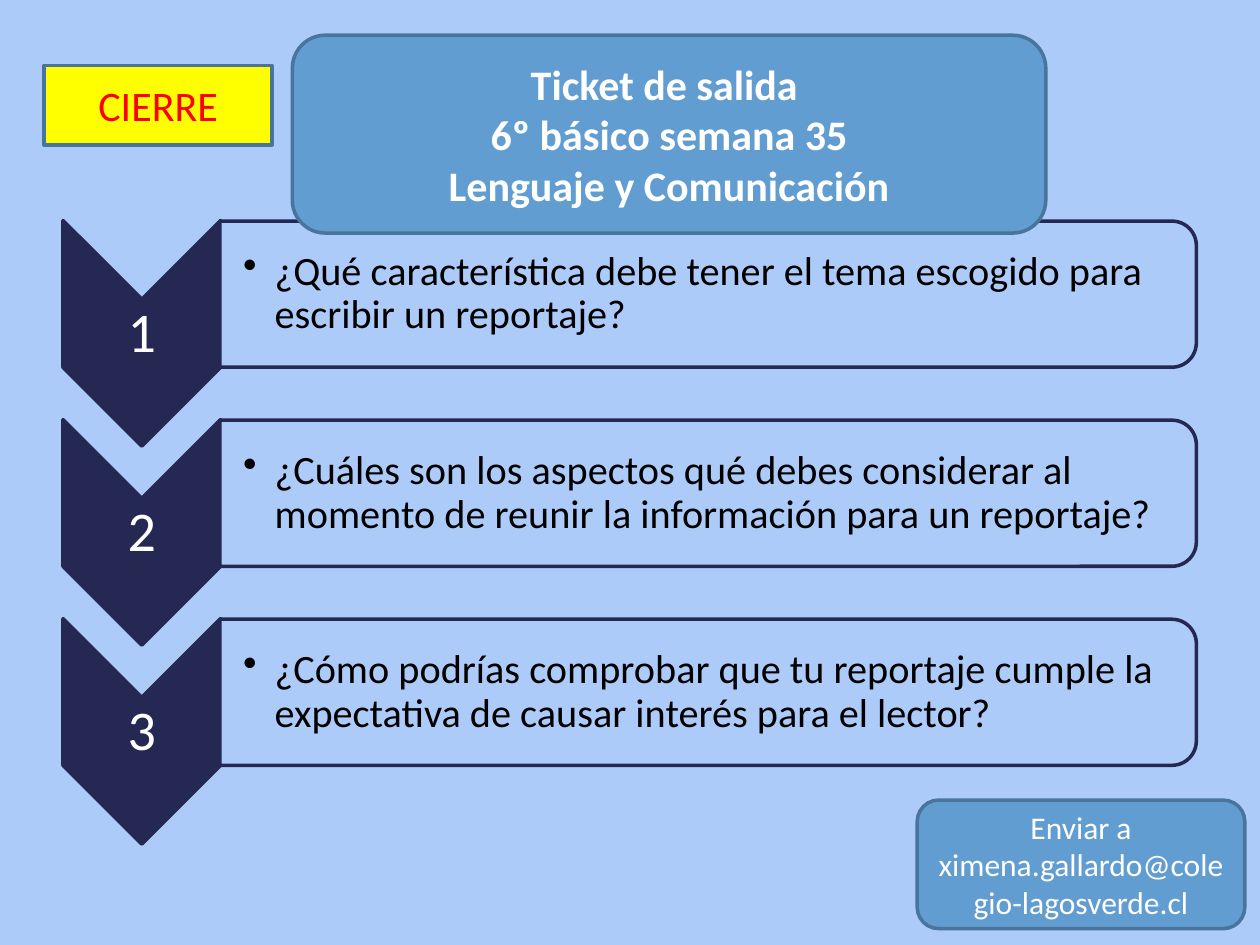
from lxml import etree
from pptx import Presentation
from pptx import util as u
from pptx.dml import color
from pptx.enum import shapes, text
from pptx.oxml import ns

COLORS = {
    "sky": "ACCBF9", "navy": "242852", "blue": "629DD1", "edge": "49749B",
    "yellow": "FFFF00", "red": "FF0000", "white": "FFFFFF", "black": "000000",
}
QUESTIONS = [
    "¿Qué característica debe tener el tema escogido para escribir un reportaje?",
    "¿Cuáles son los aspectos qué debes considerar al momento de reunir la información para un reportaje?",
    "¿Cómo podrías comprobar que tu reportaje cumple la expectativa de causar interés para el lector?",
]
ROW_STEP = 1.58


def rgb(name):
    return color.RGBColor.from_string(COLORS[name])


def add_part(kind, box, fill=None, line=None, lines=(), size=18, ink="white",
             bold=None, align=text.PP_ALIGN.CENTER, insets=(0.1, 0.05, 0.1, 0.05)):
    """Add a shape, or a text box when kind is None, with centred-height text."""
    box = [u.Inches(v) for v in box]
    if kind is None:
        part = slide.shapes.add_textbox(*box)
    else:
        part = slide.shapes.add_shape(kind, *box)
        part.shadow.inherit = False
        part.fill.solid()
        part.fill.fore_color.rgb = rgb(fill)
        part.line.color.rgb = rgb(line)
        part.line.width = u.Pt(2)
    frame = part.text_frame
    frame.word_wrap = True
    frame.vertical_anchor = text.MSO_ANCHOR.MIDDLE
    (frame.margin_left, frame.margin_top,
     frame.margin_right, frame.margin_bottom) = [u.Inches(v) for v in insets]
    for i, words in enumerate(lines):
        paragraph = frame.add_paragraph() if i else frame.paragraphs[0]
        paragraph.text = words
        paragraph.alignment = align
        paragraph.font.name = "Calibri"
        paragraph.font.size = u.Pt(size)
        paragraph.font.bold = bold
        paragraph.font.color.rgb = rgb(ink)
    return part


deck = Presentation()
deck.slide_width, deck.slide_height = u.Inches(10), u.Inches(7.5)
slide = deck.slides.add_slide(deck.slide_layouts[6])
slide.background.fill.solid()
slide.background.fill.fore_color.rgb = rgb("sky")

# Numbered questions: chevron, number, frame, bulleted text
for row, question in enumerate(QUESTIONS):
    drop = row * ROW_STEP
    chevron = add_part(shapes.MSO_SHAPE.CHEVRON, (0.23, 2.02 + drop, 1.79, 1.25), "navy", "navy")
    chevron.rotation = 90
    number = add_part(None, (0.5, 2.38 + drop, 1.25, 0.54), lines=[str(row + 1)],
                      size=32, insets=[0.02] * 4)
    panel = add_part(shapes.MSO_SHAPE.ROUND_2_SAME_RECTANGLE,
                     (5.04, -1.54 + drop, 1.16, 7.75), "sky", "navy")
    panel.rotation = 90
    answer = add_part(None, (1.75, 1.81 + drop, 7.69, 1.05), lines=[question], size=23,
                      ink="black", align=text.PP_ALIGN.LEFT, insets=(0.18, 0.02, 0.02, 0.02))
    for part in (number, answer):
        part.text_frame.paragraphs[0].line_spacing = 0.9

    # Bullet with hanging indent
    indent = u.Inches(0.25)
    properties = answer.text_frame.paragraphs[0].font._element.getparent()
    properties.set("marL", str(indent))
    properties.set("indent", str(-indent))
    bullet = etree.Element(ns.qn("a:buChar"), char="•")
    properties.find(ns.qn("a:defRPr")).addprevious(bullet)

# Title
add_part(shapes.MSO_SHAPE.ROUNDED_RECTANGLE, (2.32, 0.28, 5.98, 1.57), "blue", "edge",
         ["Ticket de salida ", "6º básico semana 35", "Lenguaje y Comunicación"],
         size=24, bold=True)

# Where to send the answers
add_part(shapes.MSO_SHAPE.ROUNDED_RECTANGLE, (7.28, 6.35, 2.6, 1.02), "blue", "edge",
         ["Enviar a ximena.gallardo@colegio-lagosverde.cl"])

# Lesson stage
add_part(shapes.MSO_SHAPE.RECTANGLE, (0.35, 0.52, 1.81, 0.63), "yellow", "edge",
         ["CIERRE"], size=24, ink="red")

deck.save("out.pptx")
